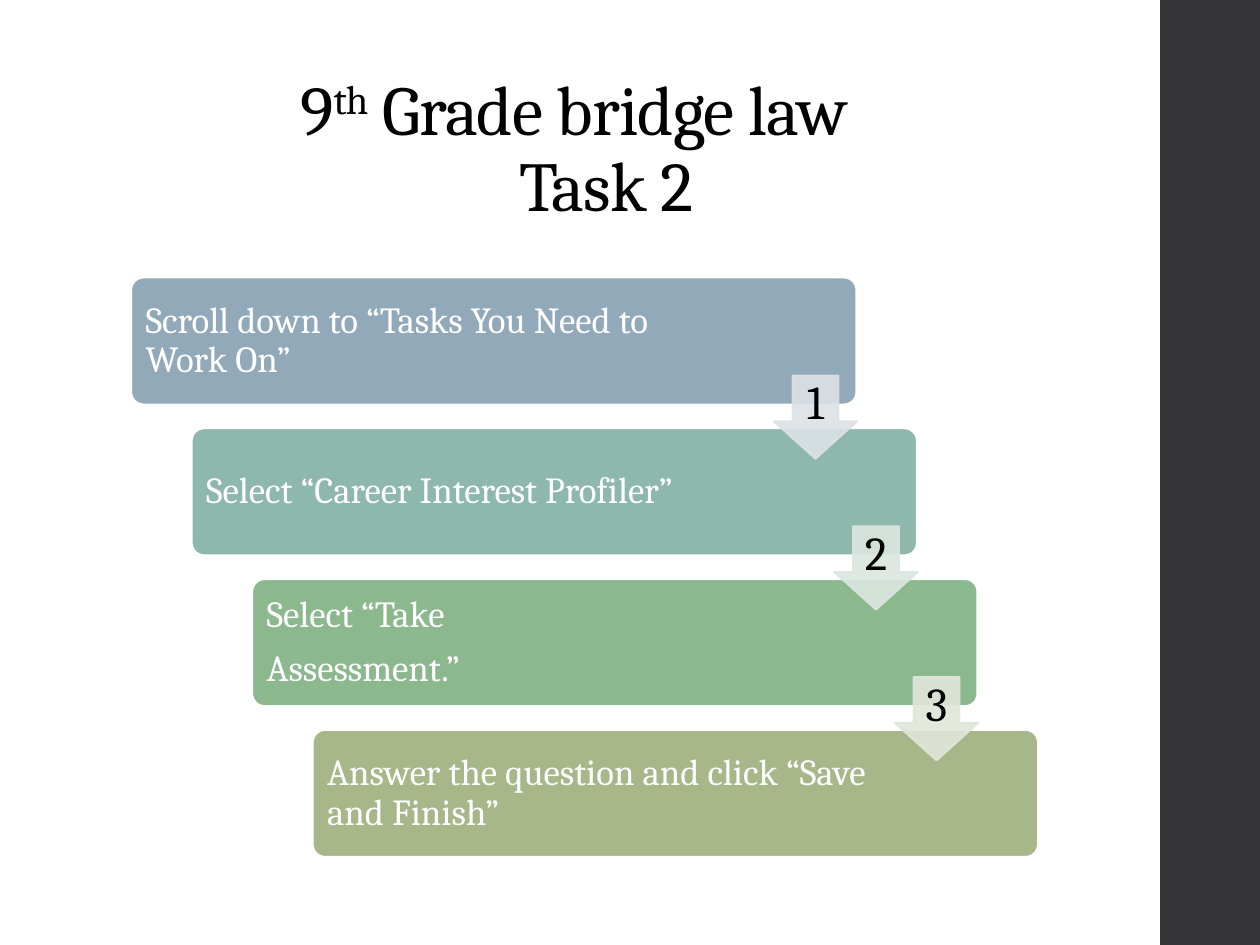
from dataclasses import dataclass

from lxml.etree import SubElement
from pptx import Presentation
from pptx.dml.color import RGBColor
from pptx.enum.shapes import MSO_SHAPE
from pptx.enum.text import MSO_ANCHOR, PP_ALIGN
from pptx.oxml.ns import qn
from pptx.shapes.autoshape import Shape
from pptx.slide import Slide
from pptx.text.text import TextFrame, _Paragraph
from pptx.util import Cm, Length, Pt


@dataclass(frozen=True)
class Theme:
    font: str = "Cambria"
    title_size: int = 40
    step_size: int = 21
    number_size: int = 27
    dark: str = "000000"
    light: str = "FFFFFF"
    sidebar: str = "353537"


@dataclass(frozen=True)
class Step:
    lines: tuple[str, ...]
    fill: str


@dataclass(frozen=True)
class TitleLine:
    indent: Length
    pieces: tuple[tuple[str, int], ...]


THEME = Theme()
STEPS = (
    Step(("Scroll down to “Tasks You Need to Work On”",), "92A9B9"),
    Step(("Select “Career Interest Profiler”",), "8FB8AD"),
    Step(("Select “Take", "Assessment.”"), "8CB88E"),
    Step(("Answer the question and click “Save and Finish”",), "A7B789"),
)
ARROW_FILLS = ("DCE2E6", "DBE6DF", "E1E6DA")
TITLE = (
    TitleLine(Cm(3.18), (("9", 0), ("th", 30), (" Grade bridge law", 0))),
    TitleLine(Cm(7.6), (("Task 2", 0),)),
)
STEP_RIGHT, STEP_DOWN = Cm(1.22), Cm(3.04)


def add_run(paragraph: _Paragraph, text: str, size: int, color: str):
    run = paragraph.add_run()
    run.text = text
    run.font.name = THEME.font
    run.font.size = Pt(size)
    run.font.color.rgb = RGBColor.from_string(color)
    return run


def set_frame(frame: TextFrame, anchor: MSO_ANCHOR, left: Length, top: Length,
              right: Length, bottom: Length) -> None:
    frame.word_wrap = True
    frame.vertical_anchor = anchor
    frame.margin_left, frame.margin_top = left, top
    frame.margin_right, frame.margin_bottom = right, bottom


def add_lines(frame: TextFrame, lines: tuple[str, ...], size: int, color: str,
              alignment: PP_ALIGN) -> None:
    for index, line in enumerate(lines):
        paragraph = frame.add_paragraph() if index else frame.paragraphs[0]
        paragraph.alignment = alignment
        paragraph.line_spacing = 0.9
        paragraph.space_after = Pt(8)
        add_run(paragraph, line, size, color)


def add_filled_shape(slide: Slide, kind: MSO_SHAPE, left: Length, top: Length,
                     width: Length, height: Length, fill: str) -> Shape:
    shape = slide.shapes.add_shape(kind, left, top, width, height)
    shape.shadow.inherit = False
    shape.fill.solid()
    shape.fill.fore_color.rgb = RGBColor.from_string(fill)
    shape.line.fill.background()
    return shape


def set_line(shape: Shape, color: str, width: float) -> None:
    shape.line.color.rgb = RGBColor.from_string(color)
    shape.line.width = Pt(width)


def add_title(slide: Slide) -> None:
    box = slide.shapes.add_textbox(Cm(2.62), Cm(1.02), Cm(20.19), Cm(3.68))
    frame = box.text_frame
    set_frame(frame, MSO_ANCHOR.BOTTOM, Cm(0.25), Cm(0.13), Cm(0.25), Cm(0.13))
    for index, line in enumerate(TITLE):
        paragraph = frame.add_paragraph() if index else frame.paragraphs[0]
        paragraph.line_spacing = 0.9
        properties = paragraph._p.get_or_add_pPr()
        properties.set("marL", str(line.indent))
        properties.set("indent", "0")
        for text, raised_percent in line.pieces:
            run = add_run(paragraph, text, THEME.title_size, THEME.dark)
            run_properties = run._r.get_or_add_rPr()
            run_properties.set("spc", "-50")
            if raised_percent:
                run_properties.set("baseline", str(raised_percent * 1000))


def add_step(slide: Slide, index: int, step: Step) -> None:
    bar = add_filled_shape(
        slide, MSO_SHAPE.ROUNDED_RECTANGLE, Cm(2.64) + index * STEP_RIGHT,
        Cm(5.59) + index * STEP_DOWN, Cm(14.63), Cm(2.57), step.fill)
    bar.adjustments[0] = 0.1
    set_line(bar, THEME.light, 1.35)
    set_frame(bar.text_frame, MSO_ANCHOR.MIDDLE,
              Cm(0.22), Cm(0.23), Cm(3.1), Cm(0.23))
    add_lines(bar.text_frame, step.lines, THEME.step_size, THEME.light,
              PP_ALIGN.LEFT)


def add_number_arrow(slide: Slide, index: int, fill: str) -> None:
    arrow = add_filled_shape(
        slide, MSO_SHAPE.DOWN_ARROW, Cm(15.6) + index * STEP_RIGHT,
        Cm(7.57) + index * STEP_DOWN, Cm(1.68), Cm(1.68), fill)
    arrow.adjustments[0] = 0.55
    arrow.adjustments[1] = 0.45
    set_line(arrow, fill, 1.1)
    for color in arrow._element.spPr.iter(qn("a:srgbClr")):
        SubElement(color, qn("a:alpha")).set("val", "90000")
    set_frame(arrow.text_frame, MSO_ANCHOR.MIDDLE,
              Cm(0.1), Cm(0.1), Cm(0.1), Cm(0.2))
    add_lines(arrow.text_frame, (str(index + 1),), THEME.number_size,
              THEME.dark, PP_ALIGN.CENTER)


def main() -> None:
    presentation = Presentation()
    presentation.slide_width, presentation.slide_height = Cm(25.4), Cm(19.05)
    slide = presentation.slides.add_slide(presentation.slide_layouts[6])
    add_filled_shape(slide, MSO_SHAPE.RECTANGLE, Cm(23.39), Cm(0), Cm(2.01),
                     Cm(19.05), THEME.sidebar)
    add_title(slide)
    for index, step in enumerate(STEPS):
        add_step(slide, index, step)
    for index, fill in enumerate(ARROW_FILLS):
        add_number_arrow(slide, index, fill)
    presentation.save("out.pptx")


if __name__ == "__main__":
    main()
